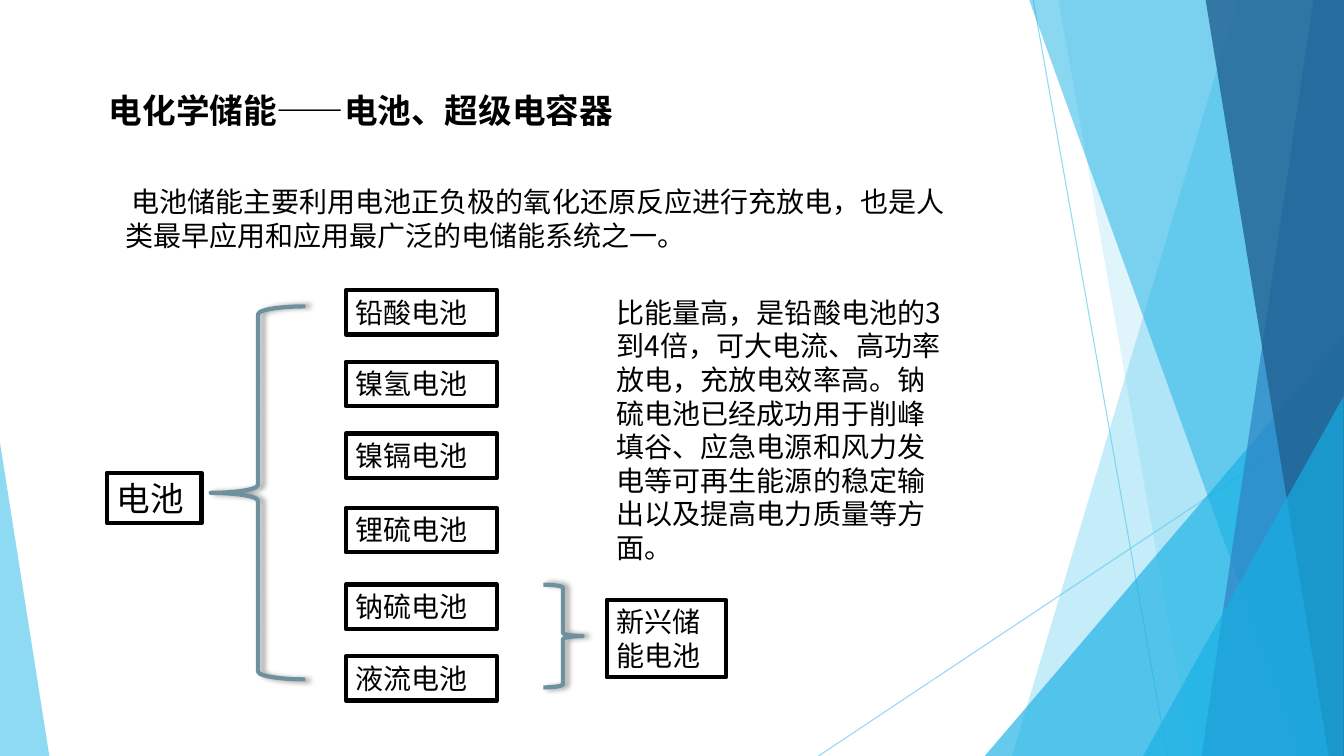
"""Builds a slide that classifies batteries for electrochemical energy storage."""
from lxml.etree import SubElement
from pptx import Presentation
from pptx.dml.color import RGBColor
from pptx.enum.shapes import MSO_CONNECTOR, MSO_SHAPE
from pptx.enum.text import MSO_ANCHOR, MSO_AUTO_SIZE, PP_ALIGN
from pptx.oxml.ns import qn
from pptx.util import Inches, Pt

COLORS = {
    "ink": "000000",
    "brace": "6E91A0",
    "sky": "5FCBEF",
    "azure": "17B0E4",
    "blue": "2E83C3",
    "navy": "226292",
}
COLUMNS, ROWS = 133.33, 75


def color(name):
    """Return the named colour."""
    return RGBColor.from_string(COLORS[name])


def fade(parent, opacity):
    """Set the opacity, in percent, of a solid fill or line."""
    solid = parent.find(qn("a:solidFill"))
    SubElement(solid[0], qn("a:alpha"), val=str(opacity * 1000))


def write(shape, text, size=20, bold=False, font_name="Noto Sans CJK SC"):
    """Write one left-aligned paragraph into a shape."""
    frame = shape.text_frame
    frame.word_wrap = True
    frame.auto_size = MSO_AUTO_SIZE.NONE
    frame.vertical_anchor = MSO_ANCHOR.TOP
    paragraph = frame.paragraphs[0]
    paragraph.alignment = PP_ALIGN.LEFT
    paragraph.space_before = Pt(0)
    properties = paragraph._p.get_or_add_pPr()
    properties.set("marL", "0")
    properties.set("indent", "0")
    SubElement(properties, qn("a:buNone"))
    run = paragraph.add_run()
    run.text = text
    run.font.size = Pt(size)
    run.font.bold = bold
    run.font.name = font_name
    run.font.color.rgb = color("ink")
    SubElement(run._r.get_or_add_rPr(), qn("a:ea"), typeface=font_name)


class SlideBuilder:
    """Holds the grid, the line style and the current slide."""

    def __init__(self, presentation):
        self.column = presentation.slide_width / COLUMNS
        self.row = presentation.slide_height / ROWS
        self.outline = Pt(3)
        self.slide = presentation.slides.add_slide(presentation.slide_layouts[1])
        self.shapes = self.slide.shapes

    def point(self, column, row):
        """Turn grid coordinates into lengths."""
        return round(column * self.column), round(row * self.row)

    def area(self, left, top, width, height):
        """Turn a grid area into lengths."""
        return *self.point(left, top), *self.point(width, height)

    def placeholder(self, index, text, area, **text_format):
        """Move a template placeholder to the front and fill it."""
        shape = self.slide.placeholders[index]
        shape.left, shape.top, shape.width, shape.height = self.area(*area)
        self.shapes._spTree.append(shape._element)
        write(shape, text, **text_format)

    def text(self, text, area, **text_format):
        """Add a text box."""
        write(self.shapes.add_textbox(*self.area(*area)), text, **text_format)

    def outlined(self, kind, area, line_color):
        """Add an unfilled preset shape."""
        shape = self.shapes.add_shape(kind, *self.area(*area))
        shape.shadow.inherit = False
        shape.fill.background()
        shape.line.color.rgb = color(line_color)
        shape.line.width = self.outline
        return shape

    def box(self, text, area, **text_format):
        """Add a framed label."""
        write(self.outlined(MSO_SHAPE.RECTANGLE, area, "ink"), text, **text_format)

    def brace(self, kind, area):
        """Add a brace with a soft shadow to its right."""
        shape = self.outlined(kind, area, "brace")
        effects = shape._element.spPr.find(qn("a:effectLst"))
        shadow = SubElement(effects, qn("a:outerShdw"), blurRad=str(Pt(4)),
                            dist=str(Pt(3)), dir="0", rotWithShape="0")
        tint = SubElement(shadow, qn("a:srgbClr"), val=COLORS["ink"])
        SubElement(tint, qn("a:alpha"), val="40000")

    def paint(self, shape, fill_color, opacity):
        """Give a shape a translucent fill and no line."""
        shape.shadow.inherit = False
        shape.fill.solid()
        shape.fill.fore_color.rgb = color(fill_color)
        fade(shape._element.spPr, opacity)
        shape.line.fill.background()

    def facet(self, top_column, bottom_column, fill_color, opacity):
        """Fill the slide from a slanted edge to its right side."""
        corners = [(COLUMNS, 0), (COLUMNS, ROWS), (bottom_column, ROWS)]
        outline = self.shapes.build_freeform(*self.point(top_column, 0))
        outline.add_line_segments([self.point(*corner) for corner in corners])
        self.paint(outline.convert_to_shape(), fill_color, opacity)

    def triangle(self, left, top, width, apex, fill_color, opacity):
        """Add a triangle that stands on the bottom of the slide."""
        area = self.area(left, top, width, ROWS - top)
        shape = self.shapes.add_shape(MSO_SHAPE.ISOSCELES_TRIANGLE, *area)
        shape.adjustments[0] = apex
        self.paint(shape, fill_color, opacity)

    def ray(self, start, end):
        """Add a thin translucent line."""
        line = self.shapes.add_connector(
            MSO_CONNECTOR.STRAIGHT, *self.point(*start), *self.point(*end))
        line.line.color.rgb = color("sky")
        line.line.width = Pt(0.75)
        properties = line._element.spPr
        fade(properties.find(qn("a:ln")), 70)
        SubElement(properties, qn("a:effectLst"))


def draw_backdrop(builder):
    """Draw the translucent facets at the slide's sides."""
    builder.ray((102.5, 0), (115.8, ROWS))
    builder.ray((COLUMNS, 40.3), (81.2, ROWS))
    builder.facet(122.8, 100.4, "sky", 36)
    builder.facet(105, 118.3, "sky", 20)
    builder.triangle(97.7, 33.3, 35.6, 1, "azure", 66)
    builder.facet(102.1, 129.1, "azure", 50)
    builder.facet(130.3, 119.2, "blue", 70)
    builder.facet(119.6, 131.8, "navy", 80)
    builder.triangle(113.4, 39.3, 19.9, 1, "azure", 66)
    builder.triangle(0, 43.9, 4.9, 0, "sky", 70)


def draw_battery_tree(builder):
    """Draw the battery kinds and the braces that group them."""
    builder.box("电池", (10.6, 46.9, 9.4, 5), size=24)
    builder.brace(MSO_SHAPE.LEFT_BRACE, (20.9, 30.4, 9.4, 37))
    kinds = {"铅酸电池": 28.8, "镍氢电池": 35.9, "镍镉电池": 43,
             "锂硫电池": 50.4, "钠硫电池": 58, "液流电池": 65.1}
    for kind, top in kinds.items():
        builder.box(kind, (34.3, top, 15, 4.4))
    builder.brace(MSO_SHAPE.RIGHT_BRACE, (53.9, 58, 3.9, 10.2))
    builder.box("新兴储能电池", (60.2, 59.5, 11.8, 7.7))


def main():
    """Build and save the slide."""
    presentation = Presentation()
    presentation.slide_width = Inches(13.33)
    presentation.slide_height = Inches(7.5)
    builder = SlideBuilder(presentation)
    draw_backdrop(builder)
    builder.placeholder(0, "电化学储能——电池、超级电容器",
                        (9.8, 8.4, 55.1, 5), size=24, bold=True)
    builder.placeholder(
        1, " 电池储能主要利用电池正负极的氧化还原反应进行充放电，"
        "也是人类最早应用和应用最广泛的电储能系统之一。", (11.4, 17.8, 85, 7.7))
    draw_battery_tree(builder)
    builder.text(
        "比能量高，是铅酸电池的3到4倍，可大电流、高功率放电，充放电效率高。"
        "钠硫电池已经成功用于削峰填谷、应急电源和风力发电等可再生能源的"
        "稳定输出以及提高电力质量等方面。", (60.2, 28.8, 34.6, 27.9))
    presentation.save("out.pptx")


if __name__ == "__main__":
    main()
